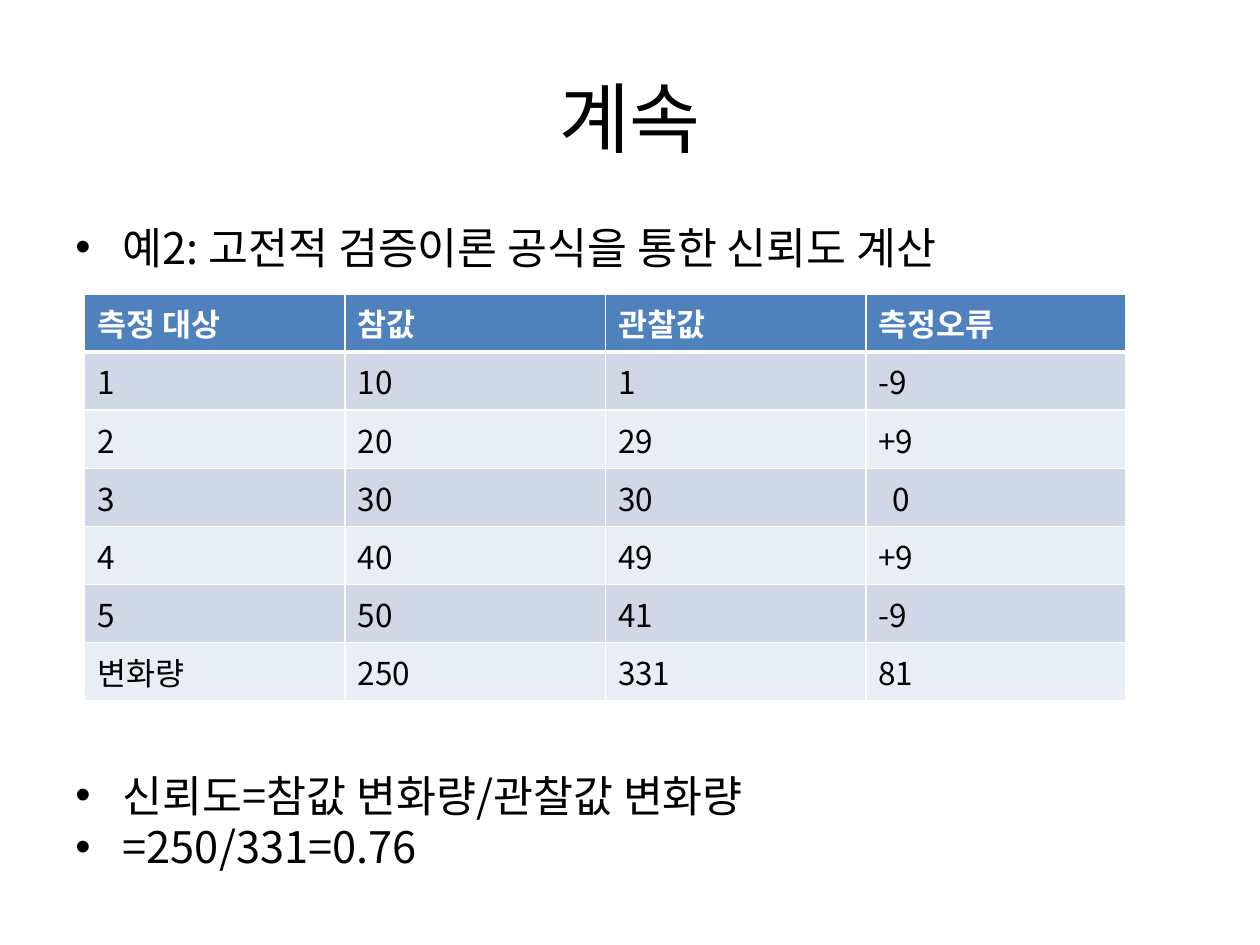
from lxml.etree import SubElement
from pptx import Presentation
from pptx.dml.color import RGBColor
from pptx.enum.text import MSO_ANCHOR as Anchor, PP_ALIGN as Align
from pptx.oxml.ns import qn
from pptx.util import Pt

FONT = "Noto Sans CJK KR"
BLACK, WHITE, HEADER_BLUE = "000000", "FFFFFF", "4F81BD"
BANDS = ("D0D8E8", "E9EDF4")

HEADINGS = ("측정 대상", "참값", "관찰값", "측정오류")
MEASUREMENTS = (
    ("1", "10", "1", "-9"),
    ("2", "20", "29", "+9"),
    ("3", "30", "30", "0"),
    ("4", "40", "49", "+9"),
    ("5", "50", "41", "-9"),
    ("변화량", "250", "331", "81"),
)


def rgb(hex_color):
    return RGBColor.from_string(hex_color)


def style_runs(paragraph, size, color=BLACK, bold=False):
    for run in paragraph.runs:
        font = run.font
        font.name, font.size, font.bold = FONT, Pt(size), bold
        font.color.rgb = rgb(color)
        SubElement(run._r.get_or_add_rPr(), qn("a:ea"), typeface=FONT)


def set_bullet(paragraph, mark, margin=0):
    """Give the paragraph a bullet with a hanging indent."""
    props = paragraph._p.get_or_add_pPr()
    props.set("marL", str(Pt(margin)))
    props.set("indent", str(-Pt(margin)))
    SubElement(props, qn("a:buFont"), typeface="Arial" if margin else FONT)
    SubElement(props, qn("a:buChar"), char=mark)


def add_text_frame(slide, left, top, width, height):
    frame = slide.shapes.add_textbox(Pt(left), Pt(top), Pt(width), Pt(height)).text_frame
    frame.word_wrap = True
    return frame


def add_title(slide, box, title):
    frame = add_text_frame(slide, *box)
    frame.vertical_anchor = Anchor.MIDDLE
    heading = frame.paragraphs[0]
    heading.text = title
    heading.alignment = Align.CENTER
    style_runs(heading, 44)


def add_bullets(slide, box, points):
    frame = add_text_frame(slide, *box)
    frame.text = "\n".join(points)
    for point in frame.paragraphs:
        point.line_spacing = 0.82
        point.space_after = Pt(5)
        set_bullet(point, "•", 27)
        style_runs(point, 24.8)


def set_borders(cell, top=1, bottom=1):
    props = cell._tc.get_or_add_tcPr()
    for side, width in (("lnL", 1), ("lnR", 1), ("lnT", top), ("lnB", bottom)):
        line = SubElement(props, qn(f"a:{side}"), w=str(Pt(width)))
        SubElement(SubElement(line, qn("a:solidFill")), qn("a:srgbClr"), val=WHITE)


def fill_cell(cell, value, row):
    is_header = row == 0
    set_borders(cell, top=3 if row == 1 else 1, bottom=3 if is_header else 1)
    cell.fill.solid()
    cell.fill.fore_color.rgb = rgb(HEADER_BLUE if is_header else BANDS[(row - 1) % 2])
    cell.vertical_anchor = Anchor.MIDDLE
    entry = cell.text_frame.paragraphs[0]
    entry.text = value.removeprefix("-")
    if value.startswith("-"):
        set_bullet(entry, "-")
    elif value == "0":  # lines up with the digits behind the signs
        entry._p.get_or_add_pPr().set("marL", str(Pt(8)))
    style_runs(entry, 18, WHITE if is_header else BLACK, bold=is_header)


def add_measurements(slide, box):
    rows = (HEADINGS, *MEASUREMENTS)
    left, top, width, height = map(Pt, box)
    table = slide.shapes.add_table(len(rows), len(HEADINGS), left, top, width, height).table
    for row, values in enumerate(rows):
        for column, value in enumerate(values):
            fill_cell(table.cell(row, column), value, row)


def main():
    deck = Presentation()
    deck.slide_width, deck.slide_height = Pt(720), Pt(540)
    slide = deck.slides.add_slide(deck.slide_layouts[6])
    add_title(slide, (36, 21.6, 648, 90), "계속")
    add_bullets(slide, (36, 128, 648, 38), ["예2: 고전적 검증이론 공식을 통한 신뢰도 계산"])
    add_measurements(slide, (48.4, 168, 595.2, 232.4))
    add_bullets(slide, (36, 441, 648, 72), ["신뢰도=참값 변화량/관찰값 변화량", "=250/331=0.76"])
    deck.save("out.pptx")


if __name__ == "__main__":
    main()
